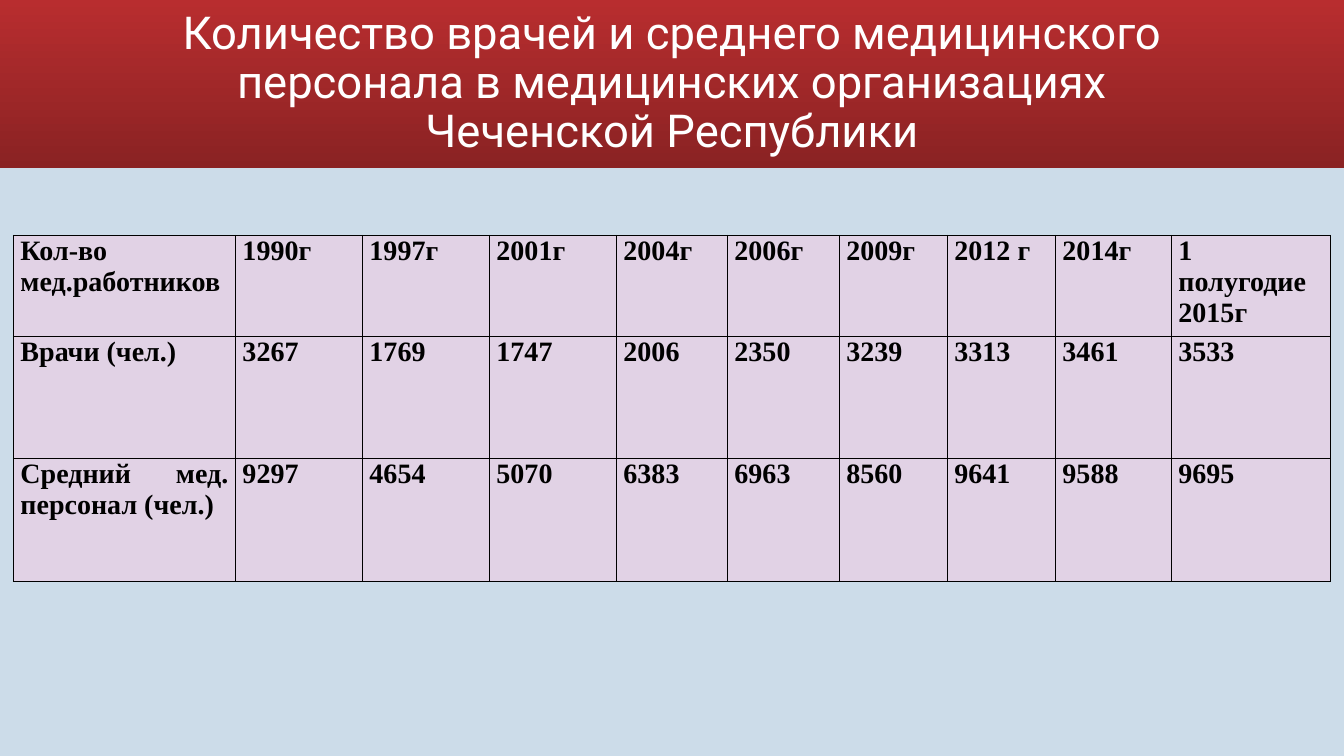
from lxml.etree import SubElement
from pptx import Presentation
from pptx.dml.color import RGBColor
from pptx.enum.shapes import MSO_SHAPE as Shape
from pptx.enum.text import MSO_ANCHOR as Anchor, PP_ALIGN as Align
from pptx.oxml.ns import qn
from pptx.util import Inches, Pt

TITLE = ("Количество врачей и среднего медицинского персонала "
         "в медицинских организациях Чеченской Республики")
STAFF = [
    ["Кол-во мед.работников", "1990г", "1997г", "2001г", "2004г", "2006г",
     "2009г", "2012 г", "2014г", "1 полугодие 2015г"],
    ["Врачи (чел.)", "3267", "1769", "1747", "2006", "2350",
     "3239", "3313", "3461", "3533"],
    ["Средний мед. персонал (чел.)", "9297", "4654", "5070", "6383", "6963",
     "8560", "9641", "9588", "9695"],
]
COLUMN_SHARES = [16.52, 9.45, 9.45, 9.45, 8.26, 8.33, 8.04, 8.04, 8.63, 11.83]
ROW_SHARES = [12.57, 16.2, 16.2]


def color(value):
    """Turn a hex string into a colour."""
    return RGBColor.from_string(value)


def apply_format(target, values):
    """Set each attribute of the target from a dict."""
    for name, value in values.items():
        setattr(target, name, value)


class StaffSlide:
    """Hold the style and the slide, with lengths in percent of its size."""

    title_font = {"name": "Roboto", "size": Pt(32.4)}
    table_font = {"name": "Times New Roman", "size": Pt(20), "bold": True}
    title_frame = {"word_wrap": True, "vertical_anchor": Anchor.MIDDLE}
    title_paragraph = {"alignment": Align.CENTER, "line_spacing": 0.9}
    cell_margins = {"margin_left": Inches(0.07), "margin_right": Inches(0.07),
                    "margin_top": 0, "margin_bottom": 0}

    def __init__(self, presentation, background):
        """Add a blank slide with a plain background."""
        self.width = presentation.slide_width
        self.height = presentation.slide_height
        self.slide = presentation.slides.add_slide(presentation.slide_layouts[6])
        fill = self.slide.background.fill
        fill.solid()
        fill.fore_color.rgb = color(background)

    def across(self, share):
        """Give a horizontal length."""
        return round(self.width * share / 100)

    def down(self, share):
        """Give a vertical length."""
        return round(self.height * share / 100)

    def box(self, left, top, width, height):
        """Give a place on the slide."""
        return self.across(left), self.down(top), self.across(width), self.down(height)

    def add_text(self, paragraph, text, font, text_color):
        """Put one formatted run in a paragraph."""
        run = paragraph.add_run()
        run.text = text
        apply_format(run.font, font)
        run.font.color.rgb = color(text_color)

    def band(self, place, top_color, bottom_color):
        """Add a rectangle with a vertical gradient."""
        shape = self.slide.shapes.add_shape(Shape.RECTANGLE, *self.box(*place))
        shape.shadow.inherit = False
        shape.line.fill.background()
        shape.fill.gradient()
        shape.fill.gradient_angle = 270
        for stop, position, value in zip(shape.fill.gradient_stops, (0, 1),
                                         (top_color, bottom_color)):
            stop.position = position
            stop.color.rgb = color(value)

    def title(self, place, text, text_color):
        """Add the centred heading."""
        frame = self.slide.shapes.add_textbox(*self.box(*place)).text_frame
        apply_format(frame, self.title_frame)
        paragraph = frame.paragraphs[0]
        apply_format(paragraph, self.title_paragraph)
        self.add_text(paragraph, text, self.title_font, text_color)

    def borders(self, cell, line_color):
        """Draw a thin line on each side of a cell."""
        properties = cell._tc.get_or_add_tcPr()
        for index, side in enumerate(("lnL", "lnR", "lnT", "lnB")):
            line = SubElement(properties, qn(f"a:{side}"), w=str(Pt(1)))
            fill = SubElement(line, qn("a:solidFill"))
            SubElement(fill, qn("a:srgbClr"), val=line_color)
            properties.insert(index, line)

    def table(self, left, top, rows, fill_color, text_color):
        """Add the table with plain cells."""
        place = self.box(left, top, sum(COLUMN_SHARES), sum(ROW_SHARES))
        table = self.slide.shapes.add_table(len(rows), len(rows[0]), *place).table
        apply_format(table, {"first_row": False, "horz_banding": False})
        for column, share in zip(table.columns, COLUMN_SHARES):
            column.width = self.across(share)
        for row, share, texts in zip(table.rows, ROW_SHARES, rows):
            row.height = self.down(share)
            for cell, text in zip(row.cells, texts):
                apply_format(cell, self.cell_margins)
                cell.fill.solid()
                cell.fill.fore_color.rgb = color(fill_color)
                self.borders(cell, text_color)
                paragraph = cell.text_frame.paragraphs[0]
                paragraph.alignment = Align.JUSTIFY
                self.add_text(paragraph, text, self.table_font, text_color)


def main():
    """Build and save the presentation."""
    presentation = Presentation()
    apply_format(presentation, {"slide_width": Inches(13.33), "slide_height": Inches(7.5)})
    staff = StaffSlide(presentation, "CCDCE9")
    staff.band((0, 0, 100, 22.22), "B82D2F", "8A2223")
    staff.title((8.75, 1.45, 82.5, 19.35), TITLE, "FFFFFF")
    staff.table(1, 31.15, STAFF, "E1D2E5", "000000")
    presentation.save("out.pptx")


if __name__ == "__main__":
    main()
